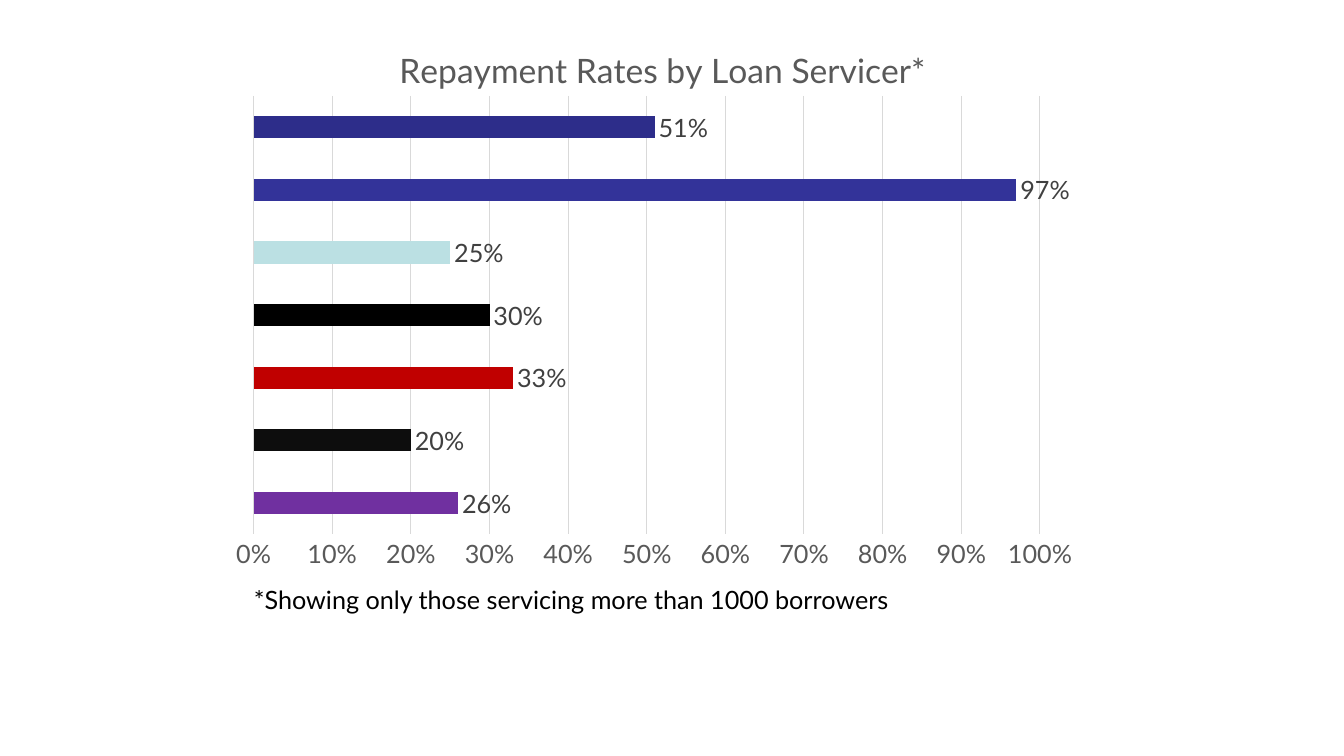
"""Build a slide with a bar chart of repayment rates by loan servicer."""
from dataclasses import dataclass

from lxml import etree
from pptx import Presentation
from pptx.chart.data import CategoryChartData
from pptx.dml.color import RGBColor
from pptx.enum.chart import XL_CHART_TYPE, XL_LABEL_POSITION, XL_TICK_MARK
from pptx.enum.text import MSO_ANCHOR, PP_ALIGN
from pptx.oxml.ns import qn
from pptx.util import Cm, Pt

BAR = XL_CHART_TYPE.BAR_CLUSTERED
OUTSIDE = XL_LABEL_POSITION.OUTSIDE_END
NO_TICK = XL_TICK_MARK.NONE
LEFT = PP_ALIGN.LEFT
TOP = MSO_ANCHOR.TOP

TITLE = "Repayment Rates by Loan Servicer*"
NOTE = "*Showing only those servicing more than 1000 borrowers"
SERVICERS = [
    ("1", 0.26, "7030A0"),
    ("2", 0.20, "0D0D0D"),
    ("3", 0.33, "C00000"),
    ("4", 0.30, "000000"),
    ("5", 0.25, "BBE0E3"),
    ("6", 0.97, "333399"),
    ("7", 0.51, "2D2D8A"),
]
CHART_BOX = (5.51, 0.43, 22.02, 14.17)
NOTE_BOX = (6.15, 14.6, 17.35, 1.07)
TITLE_LAYOUT = {"x": 0.2, "y": 0.04}
PLOT_LAYOUT = {"x": 0.04, "y": 0.14, "w": 0.9, "h": 0.78}


@dataclass(frozen=True)
class Theme:
    font: str = "Lato"
    title_size: int = 24
    text_size: int = 18
    muted: str = "595959"
    label: str = "404040"
    ink: str = "000000"
    grid: str = "D9D9D9"


THEME = Theme()


def style_font(font, size, color):
    font.name = THEME.font
    font.size = Pt(size)
    font.bold = False
    font.color.rgb = RGBColor.from_string(color)


def place(element, fractions, after, inner=False):
    for old in element.findall(qn("c:layout")):
        element.remove(old)
    layout = etree.Element(qn("c:layout"))
    manual = etree.SubElement(layout, qn("c:manualLayout"))
    if inner:
        etree.SubElement(manual, qn("c:layoutTarget"), val="inner")
    for side in "xy":
        etree.SubElement(manual, qn(f"c:{side}Mode"), val="edge")
    for side, value in fractions.items():
        etree.SubElement(manual, qn(f"c:{side}"), val=str(value))
    if after is None:
        element.insert(0, layout)
    else:
        after.addnext(layout)


def add_rates_chart(s):
    data = CategoryChartData(number_format="0%")
    data.categories = [name for name, _, _ in SERVICERS]
    data.add_series("Series 1", [rate for _, rate, _ in SERVICERS])
    chart = s.shapes.add_chart(BAR, *map(Cm, CHART_BOX), data).chart
    style_font(chart.font, THEME.text_size, THEME.ink)
    chart.has_legend = False

    r = chart.chart_title.text_frame.paragraphs[0].add_run()
    r.text = TITLE
    style_font(r.font, THEME.title_size, THEME.muted)
    title = chart._chartSpace.chart.find(qn("c:title"))
    place(title, TITLE_LAYOUT, title.find(qn("c:tx")))
    chart.chart_title.include_in_layout = False
    place(chart._chartSpace.chart.plotArea, PLOT_LAYOUT, None, inner=True)

    chart.category_axis.visible = False
    axis = chart.value_axis
    axis.minimum_scale, axis.maximum_scale, axis.major_unit = 0, 1, 0.1
    axis.major_tick_mark = axis.minor_tick_mark = NO_TICK
    axis.format.line.fill.background()
    axis.has_major_gridlines = True
    grid = axis.major_gridlines.format.line
    grid.color.rgb = RGBColor.from_string(THEME.grid)
    grid.width = Pt(0.75)
    axis.tick_labels.number_format = "0%"
    axis.tick_labels.number_format_is_linked = False
    style_font(axis.tick_labels.font, THEME.text_size, THEME.muted)

    plot = chart.plots[0]
    plot.gap_width = 182
    plot.vary_by_categories = False
    series = plot.series[0]
    for i, (_, _, color) in enumerate(SERVICERS):
        fill = series.points[i].format.fill
        fill.solid()
        fill.fore_color.rgb = RGBColor.from_string(color)
    labels = series.data_labels
    labels.show_value = True
    labels.number_format = "0%"
    labels.number_format_is_linked = False
    labels.position = OUTSIDE
    style_font(labels.font, THEME.text_size, THEME.label)


def add_note(s):
    tf = s.shapes.add_textbox(*map(Cm, NOTE_BOX)).text_frame
    tf.word_wrap = True
    tf.vertical_anchor = TOP
    p = tf.paragraphs[0]
    p.alignment = LEFT
    r = p.add_run()
    r.text = NOTE
    style_font(r.font, THEME.text_size, THEME.ink)


def main():
    prs = Presentation()
    prs.slide_width, prs.slide_height = Cm(33.87), Cm(19.05)
    s = prs.slides.add_slide(prs.slide_layouts[6])
    add_rates_chart(s)
    add_note(s)
    prs.save("out.pptx")


if __name__ == "__main__":
    main()
